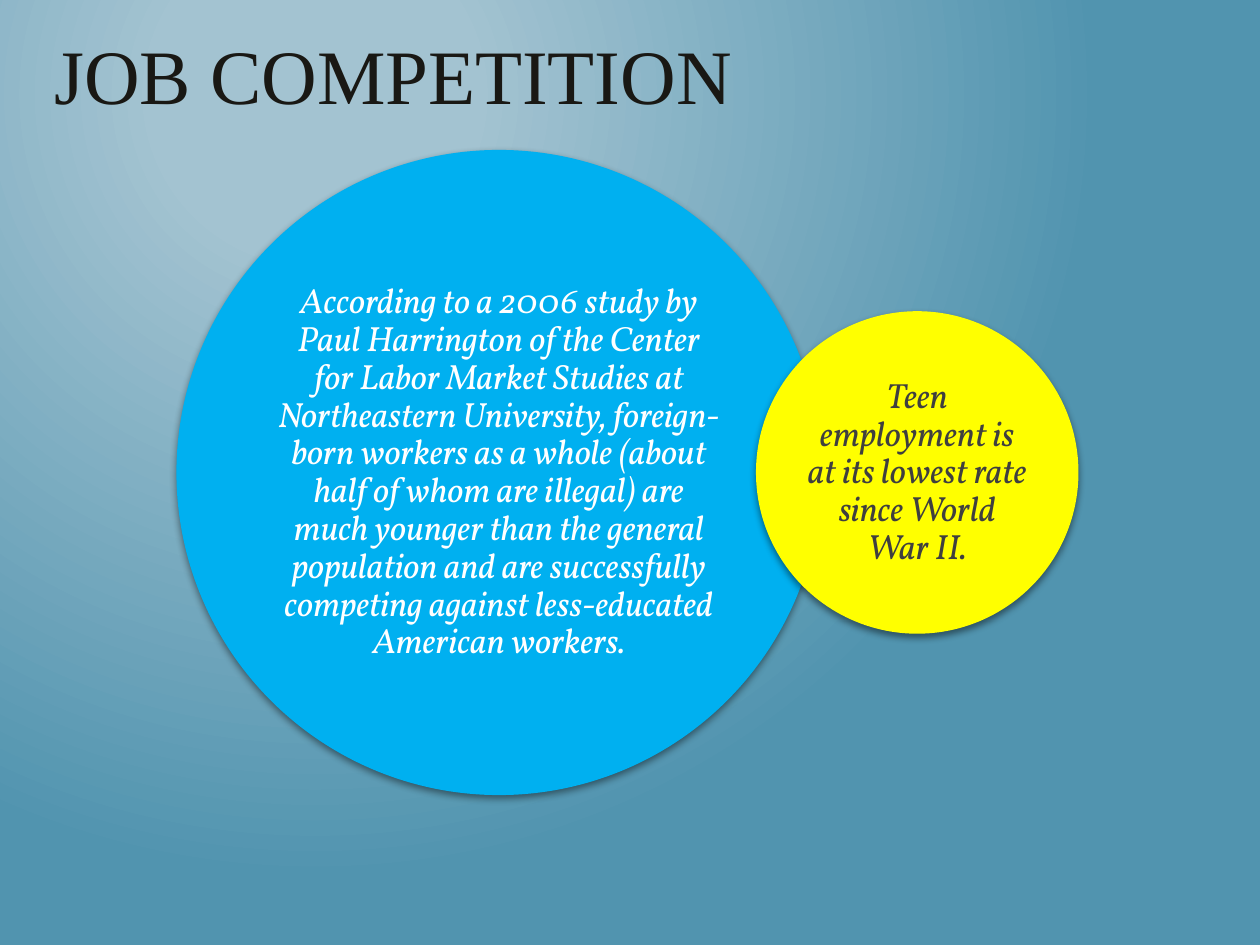
from lxml import etree
from pptx import Presentation
from pptx.dml.color import RGBColor
from pptx.enum.shapes import MSO_SHAPE
from pptx.enum.text import MSO_ANCHOR, PP_ALIGN
from pptx.oxml.ns import qn
from pptx.util import Inches, Pt

OVAL = MSO_SHAPE.OVAL
TOP, MIDDLE = MSO_ANCHOR.TOP, MSO_ANCHOR.MIDDLE
LEFT, CENTER = PP_ALIGN.LEFT, PP_ALIGN.CENTER
COLORS = {
    "glow": "A3C3D1",
    "backdrop": "5194AF",
    "title": "191814",
    "blue": "00B0F0",
    "yellow": "FFFF00",
    "white": "FFFFFF",
    "gray": "3F3F3F",
    "shadow": "000000",
}
STUDY = (
    "According to a 2006 study by Paul Harrington of the Center for Labor Market "
    "Studies at Northeastern University, foreign-born workers as a whole (about half "
    "of whom are illegal) are much younger than the general population and are "
    "successfully competing against less-educated American workers."
)
TEENS = "Teen employment is at its lowest rate since World War II."


def rgb(name):
    """Return the named palette colour."""
    return RGBColor.from_string(COLORS[name])


def paint_background(slide):
    """Fill the background with a circular glow near the upper left."""
    fill = slide.background.fill
    fill.gradient()
    for stop, color, position in zip(fill.gradient_stops, ("glow", "backdrop"), (0.2, 1)):
        stop.color.rgb = rgb(color)
        stop.position = position
    gradient = slide.element.find(".//" + qn("a:gradFill"))
    gradient.remove(gradient.find(qn("a:lin")))
    glow = etree.SubElement(gradient, qn("a:path"), path="circle")
    etree.SubElement(glow, qn("a:fillToRect"), l="50000", t="20000", r="100000", b="100000")


def write_text(shape, text, *, font, size, color, italic=False, align=LEFT,
               anchor=TOP, spacing=1.0, inset=None):
    """Put one formatted paragraph into a shape."""
    frame = shape.text_frame
    frame.word_wrap = True
    frame.vertical_anchor = anchor
    if inset is not None:
        frame.margin_left = frame.margin_right = Inches(inset)
        frame.margin_top = frame.margin_bottom = Inches(inset)
    paragraph = frame.paragraphs[0]
    paragraph.alignment = align
    paragraph.line_spacing = spacing
    run = paragraph.add_run()
    run.text = text
    run.font.name = font
    run.font.size = Pt(size)
    run.font.italic = italic
    run.font.color.rgb = rgb(color)


def add_title(slide, text):
    """Place and fill the title placeholder."""
    title = slide.shapes.title
    title.left, title.top = Inches(0.33), Inches(0.17)
    title.width, title.height = Inches(8.13), Inches(1.17)
    write_text(title, text, font="Times New Roman", size=44, color="title")


def add_soft_shadow(shape):
    """Give a shape a soft shadow falling straight down."""
    shape.shadow.inherit = False
    effects = shape.element.spPr.find(qn("a:effectLst"))
    shadow = etree.SubElement(effects, qn("a:outerShdw"), blurRad=str(Pt(4)),
                              dist=str(Pt(2)), dir="5400000", rotWithShape="0")
    tint = etree.SubElement(shadow, qn("a:srgbClr"), val=COLORS["shadow"])
    etree.SubElement(tint, qn("a:alpha"), val="44000")


def add_circle(slide, text, left, middle, diameter, fill, color):
    """Draw a shadowed circle with centred italic text."""
    circle = slide.shapes.add_shape(OVAL, Inches(left), Inches(middle - diameter / 2),
                                    Inches(diameter), Inches(diameter))
    circle.fill.solid()
    circle.fill.fore_color.rgb = rgb(fill)
    circle.line.fill.background()
    add_soft_shadow(circle)
    write_text(circle, text, font="Vollkorn", size=20, color=color, italic=True,
               align=CENTER, anchor=MIDDLE, spacing=0.9, inset=0.03)


def main():
    """Build and save the slide."""
    deck = Presentation()
    deck.slide_width, deck.slide_height = Inches(10), Inches(7.5)
    slide = deck.slides.add_slide(deck.slide_layouts[5])
    paint_background(slide)
    add_title(slide, "JOB COMPETITION")
    add_circle(slide, STUDY, 1.4, 3.75, 5.12, "blue", "white")
    add_circle(slide, TEENS, 6, 3.75, 2.56, "yellow", "gray")
    deck.save("out.pptx")


if __name__ == "__main__":
    main()
